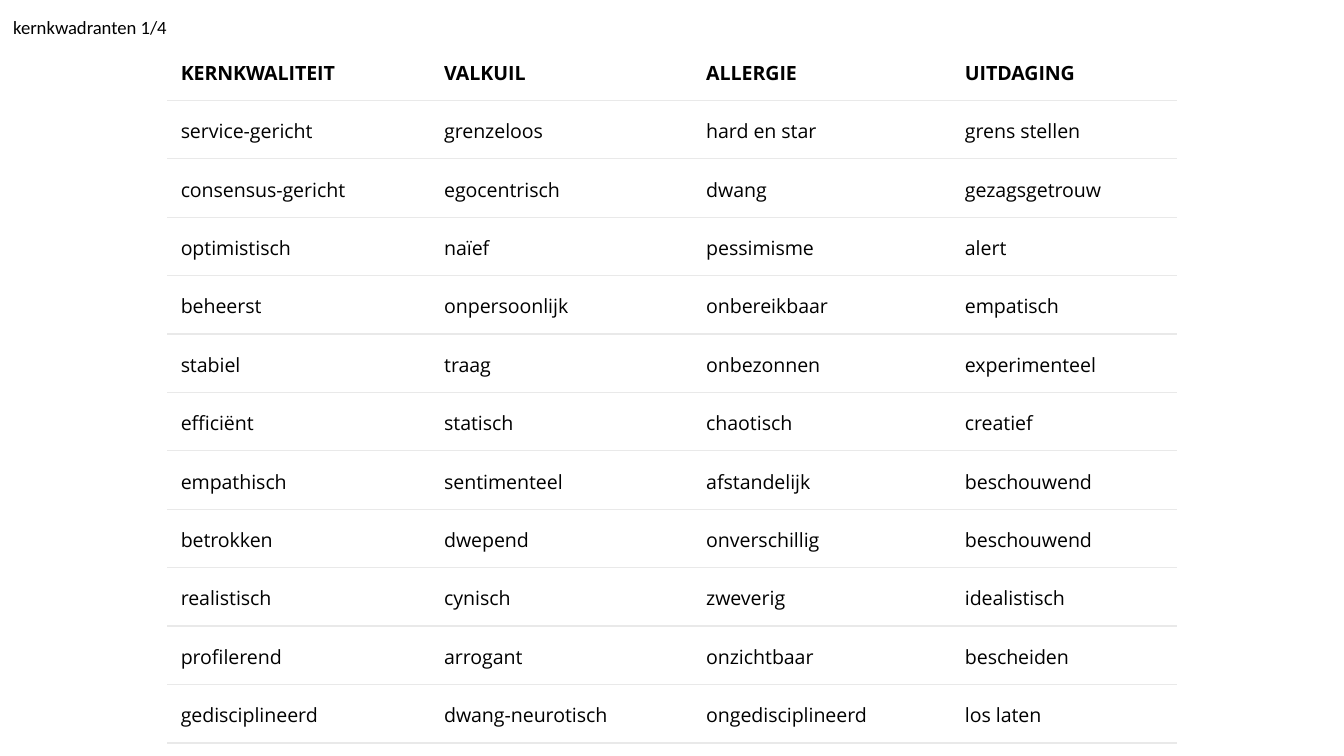
from lxml import etree
from pptx import Presentation
from pptx.dml.color import RGBColor
from pptx.enum.text import MSO_ANCHOR
from pptx.oxml.ns import qn
from pptx.util import Inches, Pt

TOP = MSO_ANCHOR.TOP
PAD, FOOT = Pt(7.2), Pt(7.78)
PLAIN = "{2D5ABB26-0587-4C30-8999-92F81FD0307C}"
WIDE = 10
HIGH = WIDE * 9 / 16
COLS = (19.6, 19.5, 19.25, 16.8)
ROW = 7.47
ROWS = [
    ("KERNKWALITEIT", "VALKUIL", "ALLERGIE", "UITDAGING"),
    ("service-gericht", "grenzeloos", "hard en star", "grens stellen"),
    ("consensus-gericht", "egocentrisch", "dwang", "gezagsgetrouw"),
    ("optimistisch", "naïef", "pessimisme", "alert"),
    ("beheerst", "onpersoonlijk", "onbereikbaar", "empatisch"),
    ("stabiel", "traag", "onbezonnen", "experimenteel"),
    ("efficiënt", "statisch", "chaotisch", "creatief"),
    ("empathisch", "sentimenteel", "afstandelijk", "beschouwend"),
    ("betrokken", "dwepend", "onverschillig", "beschouwend"),
    ("realistisch", "cynisch", "zweverig", "idealistisch"),
    ("profilerend", "arrogant", "onzichtbaar", "bescheiden"),
    ("gedisciplineerd", "dwang-neurotisch", "ongedisciplineerd", "los laten"),
]


def tint(code):
    """Turn a hex string into a colour."""
    return RGBColor.from_string(code)


def write(frame, text, font="Open Sans", size=10.5, bold=False, ink="000000", after=0):
    """Put one formatted paragraph into a text frame."""
    par = frame.paragraphs[0]
    par.line_spacing, par.space_after = 1.15, Pt(after)
    run = par.add_run()
    run.text = text
    face = run.font
    face.name, face.size, face.bold = font, Pt(size), bold
    face.color.rgb = tint(ink)


class Page:
    """Holds the style and the current slide."""

    paper, rule, line = "FFFFFF", "E9E9E9", 0.75

    def __init__(self, deck):
        """Add a blank slide to the deck."""
        self.deck = deck
        self.slide = deck.slides.add_slide(deck.slide_layouts[6])

    def x(self, share):
        """Give a percentage of the slide's width."""
        return round(self.deck.slide_width * share / 100)

    def y(self, share):
        """Give a percentage of the slide's height."""
        return round(self.deck.slide_height * share / 100)

    def pad(self, item, foot=PAD):
        """Set the insets of a cell or a text frame."""
        item.margin_left = item.margin_right = item.margin_top = PAD
        item.margin_bottom = foot
        item.vertical_anchor = TOP

    def note(self, text, left, top, wide, high, **form):
        """Add a wrapped text box."""
        box = self.slide.shapes.add_textbox(
            self.x(left), self.y(top), self.x(wide), self.y(high))
        frame = box.text_frame
        frame.word_wrap = True
        self.pad(frame)
        write(frame, text, **form)

    def edge(self, cell, side):
        """Draw a thin rule on one side of a cell."""
        line = etree.Element(qn(side), w=str(Pt(self.line)))
        fill = etree.SubElement(line, qn("a:solidFill"))
        etree.SubElement(fill, qn("a:srgbClr"), val=self.rule)
        cell._tc.get_or_add_tcPr().insert(0, line)

    def table(self, rows, left, top, cols, row):
        """Add a table with a bold head and ruled rows."""
        grid = self.slide.shapes.add_table(
            len(rows), len(cols), self.x(left), self.y(top),
            self.x(sum(cols)), self.y(row * len(rows))).table
        grid.first_row = grid.horz_banding = False
        grid._tbl.tblPr.find(qn("a:tableStyleId")).text = PLAIN
        for col, wide in zip(grid.columns, cols):
            col.width = self.x(wide)
        for r, words in enumerate(rows):
            grid.rows[r].height = self.y(row)
            for c, word in enumerate(words):
                cell = grid.cell(r, c)
                self.pad(cell, FOOT)
                cell.fill.solid()
                cell.fill.fore_color.rgb = tint(self.paper)
                self.edge(cell, "a:lnB")
                if r:
                    self.edge(cell, "a:lnT")
                write(cell.text_frame, word, bold=r == 0)


def main():
    """Build and save the deck."""
    deck = Presentation()
    deck.slide_width, deck.slide_height = Inches(WIDE), Inches(HIGH)
    page = Page(deck)
    page.table(ROWS, 12.45, 5.55, COLS, ROW)
    page.note("kernkwadranten 1/4", 0, 0, 20.4, 79.1,
              font="Calibri", size=10, after=12)
    deck.save("out.pptx")


if __name__ == "__main__":
    main()
